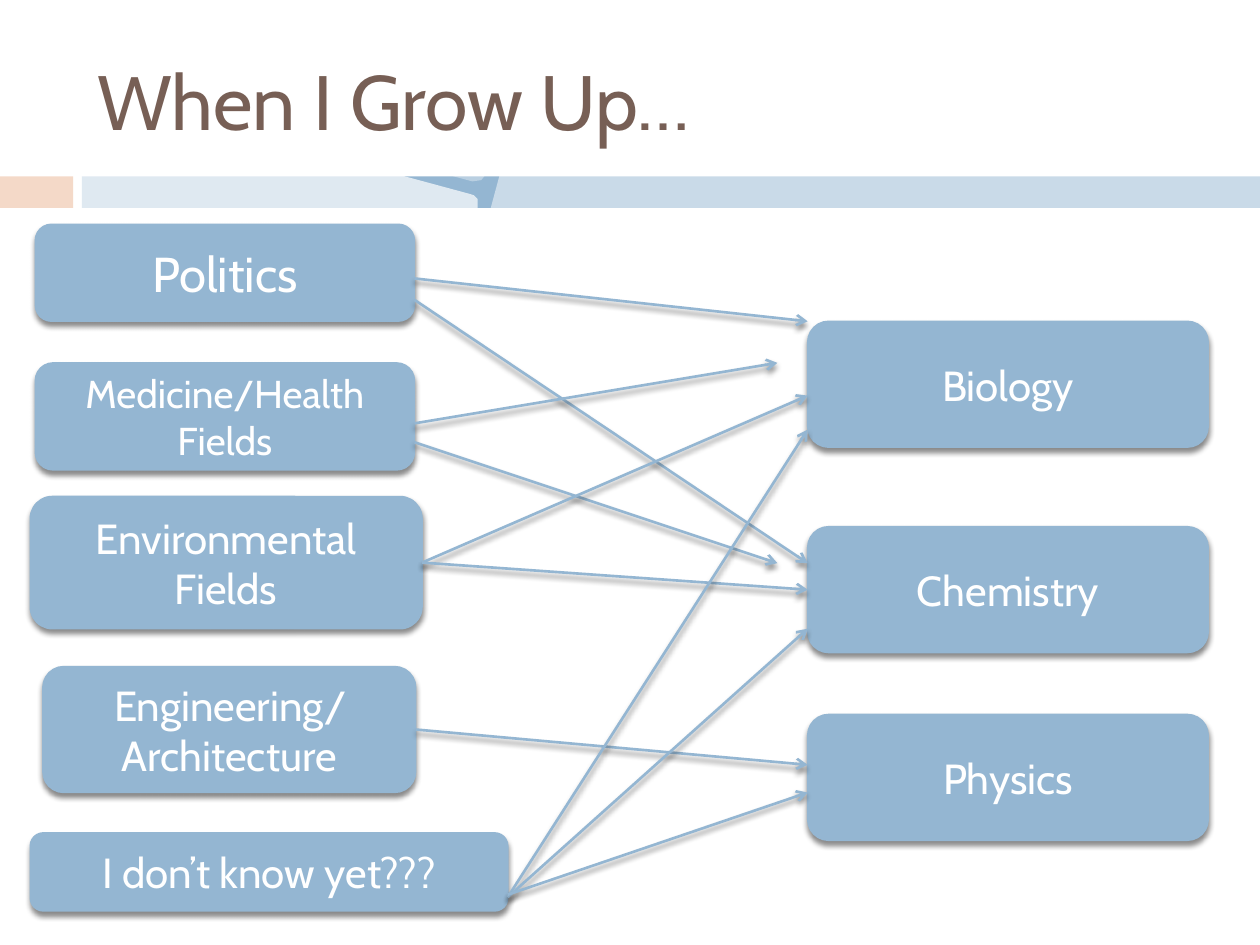
from dataclasses import dataclass

from lxml import etree
from pptx import Presentation
from pptx.dml.color import RGBColor
from pptx.enum.shapes import MSO_CONNECTOR, MSO_SHAPE
from pptx.enum.text import MSO_ANCHOR, MSO_AUTO_SIZE, PP_ALIGN
from pptx.oxml import parse_xml
from pptx.oxml.ns import nsdecls, qn
from pptx.util import Inches, Pt

ROUNDED = MSO_SHAPE.ROUNDED_RECTANGLE
RECTANGLE = MSO_SHAPE.RECTANGLE
STRAIGHT = MSO_CONNECTOR.STRAIGHT
LEFT, CENTER = PP_ALIGN.LEFT, PP_ALIGN.CENTER
LEFT_SIDE, RIGHT_SIDE = 1, 3


@dataclass(frozen=True)
class Theme:
    font: str = "Cabin"
    blue: RGBColor = RGBColor(0x94, 0xB6, 0xD2)
    orange: RGBColor = RGBColor(0xDD, 0x80, 0x47)
    brown: RGBColor = RGBColor(0x77, 0x5F, 0x55)
    white: RGBColor = RGBColor(0xFF, 0xFF, 0xFF)
    title_size: float = 44
    large_size: float = 28
    box_size: float = 24
    small_size: float = 22.2
    box_line: float = 0.79
    arrow_line: float = 1.5


THEME = Theme()

# Veil outlines across the header band, each with its opacity in percent
VEILS = [
    (70, [(0, 0.53), (3.73, 1.54), (3.76, 1.55), (3.79, 1.58), (3.79, 1.65),
          (2.21, 7.5), (0, 7.5)]),
    (35, [(0, 0), (4.23, 0), (3.86, 1.38), (3.82, 1.43), (3.75, 1.44), (0, 0.43)]),
    (50, [(4.34, 0), (10, 0), (10, 7.5), (4.95, 7.5), (2.58, 6.86), (2.52, 6.75)]),
]

CAREERS = [
    ("Politics", (0.28, 1.78, 3.01, 0.77), THEME.large_size, 0),
    ("Engineering/Architecture", (0.34, 5.29, 2.96, 1), THEME.box_size, 0),
    ("Environmental Fields", (0.24, 3.94, 3.11, 1.05), THEME.box_size, 7),
    ("I don’t know yet???", (0.24, 6.61, 3.79, 0.62), THEME.box_size, 7),
]
MEDICINE = ("Medicine/Health Fields", (0.28, 2.88, 3.01, 0.85), THEME.small_size, 7)
SUBJECT_TOPS = {"Biology": 2.55, "Chemistry": 4.18, "Physics": 5.67}

# Start, end, box joined at the start, box joined at the end
ARROWS = [
    ((3.29, 2.21), (6.41, 2.55), None, None),
    ((3.29, 2.38), (6.41, 4.47), None, None),
    ((3.29, 3.36), (6.17, 2.88), None, None),
    ((3.29, 3.51), (6.17, 4.47), None, None),
    ((3.35, 4.47), (6.41, 3.14), "Environmental Fields", None),
    ((3.35, 4.47), (6.41, 4.68), "Environmental Fields", "Chemistry"),
    ((3.3, 5.79), (6.41, 6.07), "Engineering/Architecture", None),
    ((4.03, 7.12), (6.41, 3.41), None, None),
    ((4.03, 7.12), (6.41, 4.99), None, None),
    ((4.03, 7.1), (6.41, 6.29), None, None),
]


def place(shape, bounds):
    shape.left, shape.top, shape.width, shape.height = map(Inches, bounds)


def add_soft_shadow(shape):
    shape._element.spPr.append(parse_xml(
        f'<a:effectLst {nsdecls("a")}>'
        f'<a:outerShdw blurRad="{Pt(3)}" dist="{Pt(2.4)}" dir="5400000" rotWithShape="0">'
        '<a:srgbClr val="000000"><a:alpha val="45000"/></a:srgbClr>'
        '</a:outerShdw></a:effectLst>'))


def write_text(shape, text, size, color, alignment, space_before=0):
    frame = shape.text_frame
    frame.word_wrap = True
    frame.auto_size = MSO_AUTO_SIZE.NONE
    frame.vertical_anchor = MSO_ANCHOR.MIDDLE
    paragraph = frame.paragraphs[0]
    paragraph.alignment = alignment
    paragraph.space_before = Pt(space_before)
    run = paragraph.add_run()
    run.text = text
    run.font.name = THEME.font
    run.font.size = Pt(size)
    run.font.color.rgb = color


def style_box(shape, text, size, space_before):
    shape.fill.solid()
    shape.fill.fore_color.rgb = THEME.blue
    shape.line.color.rgb = THEME.blue
    shape.line.width = Pt(THEME.box_line)
    add_soft_shadow(shape)
    write_text(shape, text, size, THEME.white, CENTER, space_before)


def add_box(slide, text, bounds, size, space_before=0):
    shape = slide.shapes.add_shape(ROUNDED, *map(Inches, bounds))
    style_box(shape, text, size, space_before)
    return shape


def fill_body_box(placeholder, text, bounds, size, space_before):
    """Turn the body placeholder into a rounded box without a bullet."""
    place(placeholder, bounds)
    placeholder._element.spPr.insert(1, parse_xml(
        f'<a:prstGeom {nsdecls("a")} prst="roundRect"><a:avLst/></a:prstGeom>'))
    style_box(placeholder, text, size, space_before)
    properties = placeholder.text_frame.paragraphs[0]._p.get_or_add_pPr()
    properties.set("marL", "0")
    properties.set("indent", "0")
    etree.SubElement(properties, qn("a:buNone"))


def style_decoration(shape, color):
    shape.fill.solid()
    shape.fill.fore_color.rgb = color
    shape.line.fill.background()
    shape.shadow.inherit = False


def add_bar(slide, left, width, color):
    bar = slide.shapes.add_shape(RECTANGLE, *map(Inches, (left, 1.4, width, 0.25)))
    style_decoration(bar, color)


def add_veil(slide, opacity, outline):
    points = [(Inches(x), Inches(y)) for x, y in outline]
    builder = slide.shapes.build_freeform(*points[0])
    builder.add_line_segments(points[1:], close=True)
    veil = builder.convert_to_shape()
    style_decoration(veil, THEME.white)
    color = veil._element.spPr.find(qn("a:solidFill"))[0]
    etree.SubElement(color, qn("a:alpha")).set("val", str(opacity * 1000))


def add_arrow(slide, start, end, source, target):
    arrow = slide.shapes.add_connector(STRAIGHT, *map(Inches, start + end))
    if source:
        arrow.begin_connect(source, RIGHT_SIDE)
    if target:
        arrow.end_connect(target, LEFT_SIDE)
    arrow.line.color.rgb = THEME.blue
    arrow.line.width = Pt(THEME.arrow_line)
    etree.SubElement(arrow.line._get_or_add_ln(), qn("a:tailEnd")).set("type", "arrow")
    add_soft_shadow(arrow)


def main():
    presentation = Presentation()
    presentation.slide_width, presentation.slide_height = Inches(10), Inches(7.5)
    slide = presentation.slides.add_slide(presentation.slide_layouts[1])
    title, body = slide.placeholders

    add_bar(slide, 0, 0.58, THEME.orange)
    add_bar(slide, 0.65, 9.35, THEME.blue)
    for opacity, outline in VEILS:
        add_veil(slide, opacity, outline)

    # The placeholders belong in front of the header decoration
    for placeholder in (title, body):
        slide.shapes._spTree.append(placeholder._element)
    place(title, (0.67, 0.25, 8.92, 1.08))
    write_text(title, "When I Grow Up…", THEME.title_size, THEME.brown, LEFT)
    fill_body_box(body, *MEDICINE)

    boxes = {career[0]: add_box(slide, *career) for career in CAREERS}
    for subject, top in SUBJECT_TOPS.items():
        boxes[subject] = add_box(slide, subject, (6.41, top, 3.18, 1), THEME.box_size)
    for start, end, source, target in ARROWS:
        add_arrow(slide, start, end, boxes.get(source), boxes.get(target))

    presentation.save("out.pptx")


if __name__ == "__main__":
    main()
